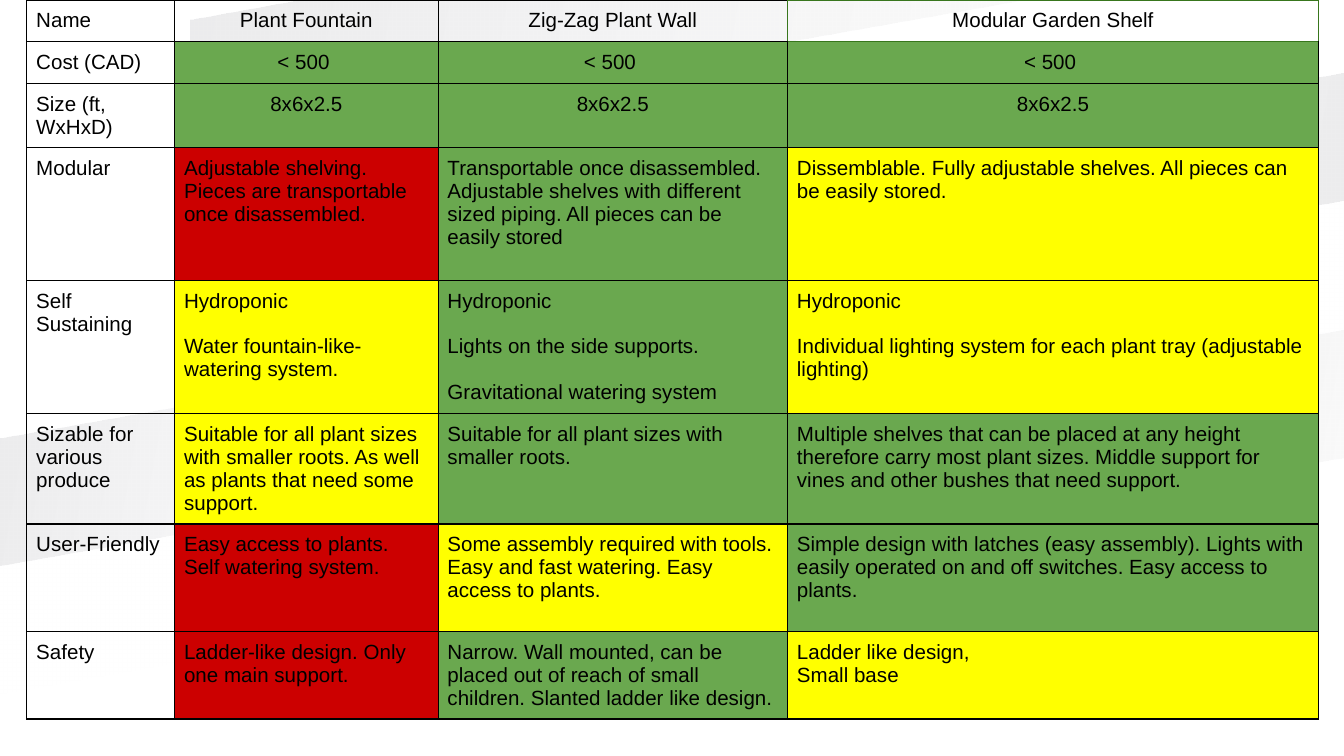
import dataclasses

import pptx
import pptx.dml.color
import pptx.enum.text
import pptx.oxml
import pptx.oxml.ns
import pptx.util

Inches, Pt = pptx.util.Inches, pptx.util.Pt
CENTER = pptx.enum.text.PP_ALIGN.CENTER
LEFT = pptx.enum.text.PP_ALIGN.LEFT


def rgb(value):
    return pptx.dml.color.RGBColor.from_string(value)


@dataclasses.dataclass(frozen=True)
class Theme:
    font: str = "Arial"
    size: int = 11
    gap: int = 12
    ink: str = "000000"
    white: str = "FFFFFF"
    shade: str = "00001A"
    header_line: str = "38761D"
    good: str = "6AA84F"
    fair: str = "FFFF00"
    poor: str = "CC0000"


THEME = Theme()
GOOD, FAIR, POOR = THEME.good, THEME.fair, THEME.poor

# Corner points, colour, and start and end opacity in percent (None is solid)
BANDS = [
    ([(0, 5.62), (10, 5.62), (10, 3.4), (0, 5.16)], THEME.white, None),
    ([(0, 3.26), (0, 4.21), (2.25, 3.81), (2.25, 2.86)], THEME.shade, (8, 2)),
    ([(2.25, 0), (1.42, 0.15), (1.42, 1.1), (7.66, 0)], THEME.shade, (8, 2)),
    ([(10, 0.54), (6.36, 1.18), (6.36, 2.14), (10, 1.49)], THEME.shade, (2, 8)),
    ([(0, 4.21), (0, 5.16), (3.77, 4.5), (3.77, 3.54)], THEME.white, (12, 5)),
    ([(10, 2.45), (8.95, 2.63), (8.95, 3.58), (10, 3.4)], THEME.shade, (8, 2)),
    ([(2.24, 0.96), (2.24, 1.91), (4.19, 1.56), (4.19, 0.61)], THEME.white, (5, 12)),
    ([(10, 1.49), (9.32, 1.61), (9.32, 2.57), (10, 2.45)], THEME.white, (12, 5)),
]

COLUMNS = [1.1, 1.96, 2.6, 3.95]
# Row height, then the cells: text alone, or text with its rating colour.
# "\n" starts a paragraph, "\n\n" one with a gap above it.
ROWS = [
    (0.31, ["Name", "Plant Fountain", "Zig-Zag Plant Wall", "Modular Garden Shelf"]),
    (0.31, ["Cost (CAD)"] + [("< 500 ", GOOD)] * 3),
    (0.48, ["Size (ft, WxHxD)"] + [("8x6x2.5", GOOD)] * 3),
    (0.99, ["Modular",
            ("Adjustable shelving.\nPieces are transportable once disassembled.", POOR),
            ("Transportable once disassembled. Adjustable shelves with different "
             "sized piping. All pieces can be easily stored", GOOD),
            ("Dissemblable. Fully adjustable shelves. All pieces can be easily "
             "stored.", FAIR)]),
    (0.99, ["Self Sustaining",
            ("Hydroponic\n\nWater fountain-like-watering system.", FAIR),
            ("Hydroponic\n\nLights on the side supports.\n\n"
             "Gravitational watering system", GOOD),
            ("Hydroponic\n\nIndividual lighting system for each plant tray "
             "(adjustable lighting)", FAIR)]),
    (0.82, ["Sizable for various produce",
            ("Suitable for all plant sizes with smaller roots. As well as plants "
             "that need some support.", FAIR),
            ("Suitable for all plant sizes with smaller roots.", GOOD),
            ("Multiple shelves that can be placed at any height therefore carry "
             "most plant sizes. Middle support for vines and other bushes that "
             "need support.", GOOD)]),
    (0.8, ["User-Friendly",
           ("Easy access to plants. Self watering system.", POOR),
           ("Some assembly required with tools. Easy and fast watering. Easy "
            "access to plants.", FAIR),
           ("Simple design with latches (easy assembly). Lights with easily "
            "operated on and off switches. Easy access to plants.", GOOD)]),
    (0.65, ["Safety",
            ("Ladder-like design. Only one main support.", POOR),
            ("Narrow. Wall mounted, can be placed out of reach of small children. "
             "Slanted ladder like design.", GOOD),
            ("Ladder like design,\nSmall base", FAIR)]),
]
CENTERED_ROWS = 3
# Sides drawn in the header line colour, by (row, column)
GREEN_SIDES = {(0, 2): "R", (0, 3): "LRTB", (1, 3): "T"}


class SlideBuilder:
    def __init__(self, prs, theme):
        self.theme = theme
        self.s = prs.slides.add_slide(prs.slide_layouts[6])
        fill = self.s.background.fill
        fill.solid()
        fill.fore_color.rgb = rgb(theme.white)

    def band(self, points, color, opacity):
        corners = [(Inches(x), Inches(y)) for x, y in points]
        builder = self.s.shapes.build_freeform(*corners[0])
        builder.add_line_segments(corners[1:], close=True)
        sp = builder.convert_to_shape()
        sp.shadow.inherit = False
        sp.line.fill.background()
        if opacity is None:
            sp.fill.solid()
            sp.fill.fore_color.rgb = rgb(color)
            return
        sp.fill.gradient()
        sp.fill.gradient_angle = 350
        for stop in sp.fill.gradient_stops:
            stop.color.rgb = rgb(color)
        clrs = list(sp._element.spPr.iter(pptx.oxml.ns.qn("a:srgbClr")))
        for clr, percent in zip(clrs, opacity):
            clr.append(pptx.oxml.parse_xml(
                f'<a:alpha {pptx.oxml.ns.nsdecls("a")} val="{percent * 1000}"/>'))

    def borders(self, cell, green_sides):
        tc_pr = cell._tc.get_or_add_tcPr()
        for side in "LRTB":
            color = self.theme.header_line if side in green_sides else self.theme.ink
            tc_pr.append(pptx.oxml.parse_xml(
                f'<a:ln{side} {pptx.oxml.ns.nsdecls("a")} w="{Pt(0.75)}"><a:solidFill>'
                f'<a:srgbClr val="{color}"/></a:solidFill></a:ln{side}>'))

    def text(self, tf, text, align):
        font = {"name": self.theme.font, "size": Pt(self.theme.size), "bold": False}
        for i, block in enumerate(text.split("\n\n")):
            for j, line in enumerate(block.split("\n")):
                p = tf.add_paragraph() if i or j else tf.paragraphs[0]
                p.alignment = align
                if i and not j:
                    p.space_before = Pt(self.theme.gap)
                r = p.add_run()
                r.text = line
                for name, value in font.items():
                    setattr(r.font, name, value)
                r.font.color.rgb = rgb(self.theme.ink)

    def cell(self, cell, text, color, align, green_sides):
        for side in ("left", "right", "top", "bottom"):
            setattr(cell, f"margin_{side}", Inches(0.07))
        self.borders(cell, green_sides)
        if color:
            cell.fill.solid()
            cell.fill.fore_color.rgb = rgb(color)
        else:
            cell.fill.background()
        self.text(cell.text_frame, text, align)

    def table(self, left, top, columns, rows):
        height = sum(row_height for row_height, _ in rows)
        table = self.s.shapes.add_table(
            len(rows), len(columns), Inches(left), Inches(top),
            Inches(sum(columns)), Inches(height)).table
        for name in ("first_row", "horz_banding"):
            setattr(table, name, False)
        for column, width in zip(table.columns, columns):
            column.width = Inches(width)
        for i, (row_height, entries) in enumerate(rows):
            table.rows[i].height = Inches(row_height)
            for j, entry in enumerate(entries):
                text, color = (entry, None) if isinstance(entry, str) else entry
                align = CENTER if j and i < CENTERED_ROWS else LEFT
                self.cell(table.cell(i, j), text, color, align,
                          GREEN_SIDES.get((i, j), ""))


def main():
    prs = pptx.Presentation()
    prs.slide_width = Inches(10)
    prs.slide_height = prs.slide_width * 9 // 16
    builder = SlideBuilder(prs, THEME)
    for band in BANDS:
        builder.band(*band)
    builder.table(0.2, 0, COLUMNS, ROWS)
    prs.save("out.pptx")


if __name__ == "__main__":
    main()
